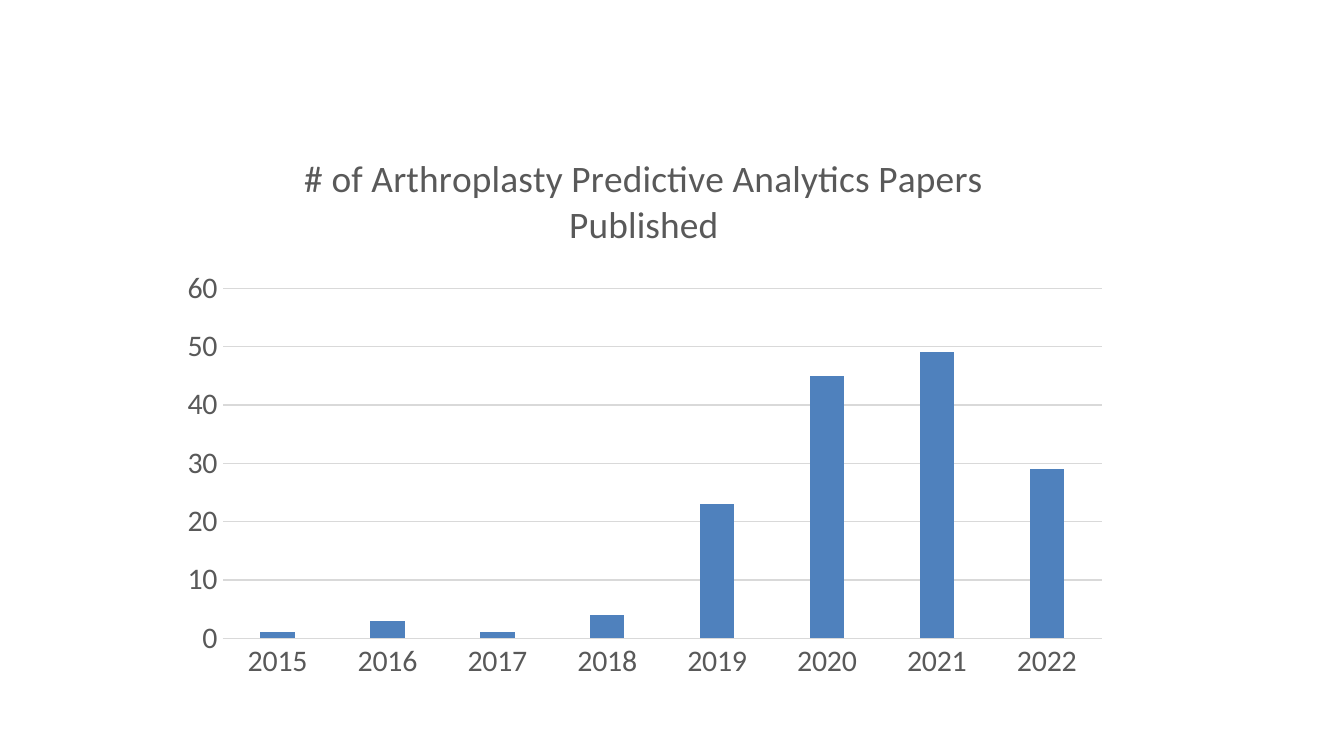
import dataclasses

import lxml.etree
import pptx
import pptx.chart.data
import pptx.dml.color
import pptx.enum.chart
import pptx.oxml
import pptx.oxml.ns
import pptx.util

PX = 9525
FONT = "Calibri"
HUES = {"bar": "4F81BD", "text": "595959", "rule": "D9D9D9", "base": "000000"}
COUNTS = {2015: 1, 2016: 3, 2017: 1, 2018: 4, 2019: 23, 2020: 45, 2021: 49, 2022: 29}
TITLE = "# of Arthroplasty Predictive Analytics Papers Published"


@dataclasses.dataclass
class Box:
    left: int
    top: int
    width: int
    height: int


FRAME = Box(120, 90, 680, 404)
PLOT = Box(39, 116, 628, 250)


def px(size: int) -> int:
    return pptx.util.Emu(size * PX)


def hue(name: str) -> pptx.dml.color.RGBColor:
    return pptx.dml.color.RGBColor.from_string(HUES[name])


def style(font, size: int, name: str) -> None:
    font.name = FONT
    font.size = pptx.util.Pt(size)
    font.bold = False
    font.color.rgb = hue(name)


def rule(line) -> None:
    line.color.rgb = hue("rule")
    line.width = pptx.util.Pt(0.75)


def style_axis(axis) -> None:
    none = pptx.enum.chart.XL_TICK_MARK.NONE
    axis.major_tick_mark = none
    axis.minor_tick_mark = none
    style(axis.tick_labels.font, 16, "text")


def place_plot(chart, plot: Box, frame: Box) -> None:
    qn = pptx.oxml.ns.qn
    area = chart.plots[0]._element.getparent()
    for old in area.findall(qn("c:layout")):
        area.remove(old)
    layout = lxml.etree.Element(qn("c:layout"))
    manual = lxml.etree.SubElement(layout, qn("c:manualLayout"))
    parts = {
        "layoutTarget": "inner",
        "xMode": "edge",
        "yMode": "edge",
        "x": plot.left / frame.width,
        "y": plot.top / frame.height,
        "w": plot.width / frame.width,
        "h": plot.height / frame.height,
    }
    for tag, value in parts.items():
        lxml.etree.SubElement(manual, qn(f"c:{tag}")).set("val", str(value))
    area.insert(0, layout)


def draw_chart(slide, frame: Box) -> None:
    data = pptx.chart.data.CategoryChartData()
    data.categories = [str(year) for year in COUNTS]
    data.add_series("Series 1", list(COUNTS.values()))
    kind = pptx.enum.chart.XL_CHART_TYPE.COLUMN_CLUSTERED
    chart = slide.shapes.add_chart(
        kind, px(frame.left), px(frame.top), px(frame.width), px(frame.height), data
    ).chart
    style(chart.font, 10, "base")
    chart.has_legend = False

    chart.has_title = True
    chart.chart_title.include_in_layout = False
    run = chart.chart_title.text_frame.paragraphs[0].add_run()
    run.text = TITLE
    style(run.font, 20, "text")

    years, count = chart.category_axis, chart.value_axis
    for axis in (years, count):
        style_axis(axis)
    rule(years.format.line)
    count.format.line.fill.background()
    count.has_major_gridlines = True
    rule(count.major_gridlines.format.line)
    count.minimum_scale = 0
    count.maximum_scale = 60
    count.major_unit = 10

    bars = chart.plots[0]
    bars.gap_width = 219
    bars.overlap = -27
    bars.vary_by_categories = False
    fill = bars.series[0].format.fill
    fill.solid()
    fill.fore_color.rgb = hue("bar")
    place_plot(chart, PLOT, frame)


def main() -> None:
    deck = pptx.Presentation()
    deck.slide_width = px(960)
    deck.slide_height = px(540)
    slide = deck.slides.add_slide(deck.slide_layouts[6])
    draw_chart(slide, FRAME)
    deck.save("out.pptx")


if __name__ == "__main__":
    main()
